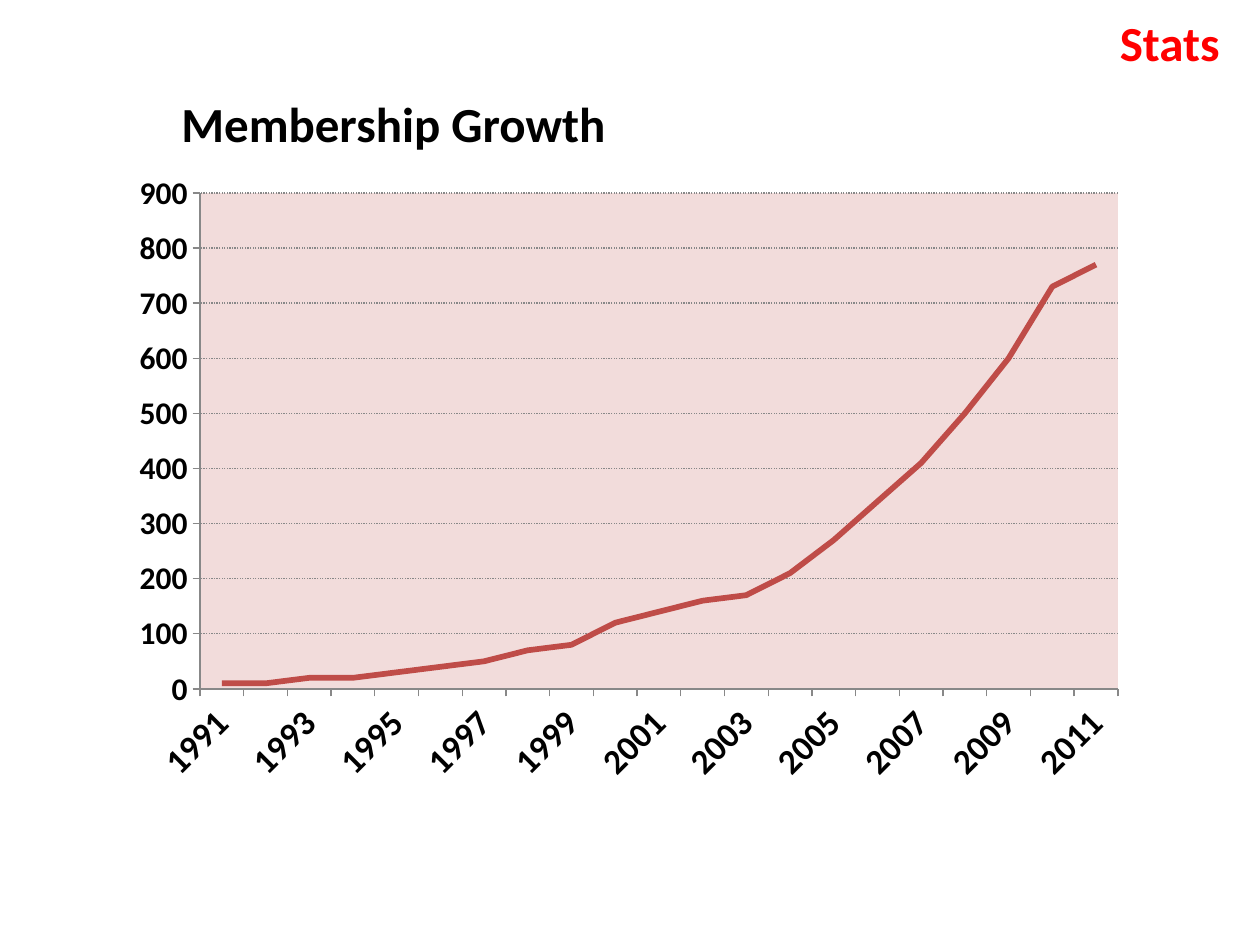
from lxml import etree
from pptx import Presentation
from pptx.chart.data import CategoryChartData
from pptx.dml.color import RGBColor
from pptx.enum.chart import XL_CHART_TYPE, XL_TICK_MARK
from pptx.enum.dml import MSO_LINE
from pptx.enum.text import MSO_AUTO_SIZE, PP_ALIGN
from pptx.oxml import parse_xml
from pptx.oxml.ns import nsdecls, qn
from pptx.util import Emu, Pt

LINE_CHART = XL_CHART_TYPE.LINE
TICK_OUTSIDE = XL_TICK_MARK.OUTSIDE
DOTTED = MSO_LINE.ROUND_DOT
FIT_SHAPE = MSO_AUTO_SIZE.SHAPE_TO_FIT_TEXT
LEFT, RIGHT = PP_ALIGN.LEFT, PP_ALIGN.RIGHT

PX_PER_INCH = 126
FONT = "Calibri"
BLACK, RED, GREY = "000000", "FF0000", "888888"
GROWTH_LINE, PLOT_FILL = "BF4C48", "F2DCDB"
FIRST_YEAR = 1991
MEMBERS = [10, 10, 20, 20, 30, 40, 50, 70, 80, 120, 140, 160, 170, 210,
           270, 340, 410, 500, 600, 730, 770]


def px(length):
    """Turn a length in px into EMU."""
    return Emu(round(length * 914400 / PX_PER_INCH))


def colour(hex_string):
    """Turn a hex string into a colour."""
    return RGBColor.from_string(hex_string)


def style_font(font, size, hex_string=BLACK):
    """Set the bold face shared by all the text."""
    font.name = FONT
    font.size = Pt(size)
    font.bold = True
    font.color.rgb = colour(hex_string)


def add_heading(slide, box, wording, hex_string, alignment):
    """Place a one-line heading in the box."""
    heading = slide.shapes.add_textbox(*map(px, box))
    frame = heading.text_frame
    frame.word_wrap = True
    frame.auto_size = FIT_SHAPE
    paragraph = frame.paragraphs[0]
    paragraph.alignment = alignment
    run = paragraph.add_run()
    run.text = wording
    style_font(run.font, 28, hex_string)


def style_axis(axis, size):
    """Set the labels, ticks and line of an axis."""
    style_font(axis.tick_labels.font, size)
    axis.major_tick_mark = TICK_OUTSIDE
    axis.format.line.color.rgb = colour(GREY)
    axis.format.line.width = Pt(0.75)


def shape_plot(chart, box, inset):
    """Fill the plot area and fix its inset within the chart box."""
    width, height = box[2:]
    shares = zip("xywh", inset, (width, height, width, height))
    places = "".join(f'<c:{side} val="{length / whole:.4f}"/>'
                     for side, length, whole in shares)
    layout = parse_xml(
        f'<c:layout {nsdecls("c")}><c:manualLayout><c:layoutTarget val="inner"/>'
        f'<c:xMode val="edge"/><c:yMode val="edge"/>{places}'
        '</c:manualLayout></c:layout>')
    plot_area = chart.element.find(".//" + qn("c:plotArea"))
    for automatic in plot_area.findall(qn("c:layout")):
        plot_area.remove(automatic)
    plot_area.insert(0, layout)
    plot_area.append(parse_xml(
        f'<c:spPr {nsdecls("c", "a")}><a:solidFill><a:srgbClr val="{PLOT_FILL}"/>'
        '</a:solidFill></c:spPr>'))


def slant_years(chart):
    """Turn the year labels by 45 degrees and show every second one."""
    year_axis = chart.element.find(".//" + qn("c:catAx"))
    body = year_axis.find(qn("c:txPr")).find(qn("a:bodyPr"))
    body.set("rot", "-2700000")
    body.set("vert", "horz")
    label_skip = etree.Element(qn("c:tickLblSkip"), val="2")
    year_axis.find(qn("c:lblOffset")).addnext(label_skip)


def add_growth_chart(slide, box):
    """Place the line chart of members by year in the box."""
    data = CategoryChartData()
    data.categories = [str(FIRST_YEAR + i) for i in range(len(MEMBERS))]
    data.add_series("Series 1", MEMBERS)
    chart = slide.shapes.add_chart(LINE_CHART, *map(px, box), data).chart
    chart.has_title = False
    chart.has_legend = False
    chart.font.name = FONT
    chart.font.size = Pt(10)
    chart.font.color.rgb = colour(BLACK)

    plot = chart.plots[0]
    plot.vary_by_categories = False
    growth = plot.series[0]
    growth.smooth = False
    growth.format.line.color.rgb = colour(GROWTH_LINE)
    growth.format.line.width = Pt(3.25)

    years, members = chart.category_axis, chart.value_axis
    style_axis(years, 20)
    style_axis(members, 18)
    members.minimum_scale, members.maximum_scale = 0, 900
    members.major_unit = 100
    members.has_major_gridlines = True
    grid = members.major_gridlines.format.line
    grid.color.rgb = colour(GREY)
    grid.width = Pt(0.75)
    grid.dash_style = DOTTED

    slant_years(chart)
    shape_plot(chart, box, (80, 32, 918, 496))


def main():
    """Build the membership slide."""
    deck = Presentation()
    deck.slide_width, deck.slide_height = px(1260), px(945)
    slide = deck.slides.add_slide(deck.slide_layouts[6])
    add_growth_chart(slide, (120, 161, 1019, 635))
    add_heading(slide, (169, 87, 489, 72), "Membership Growth", BLACK, LEFT)
    add_heading(slide, (1052, 6, 180, 72), "Stats", RED, RIGHT)
    deck.save("out.pptx")


if __name__ == "__main__":
    main()
